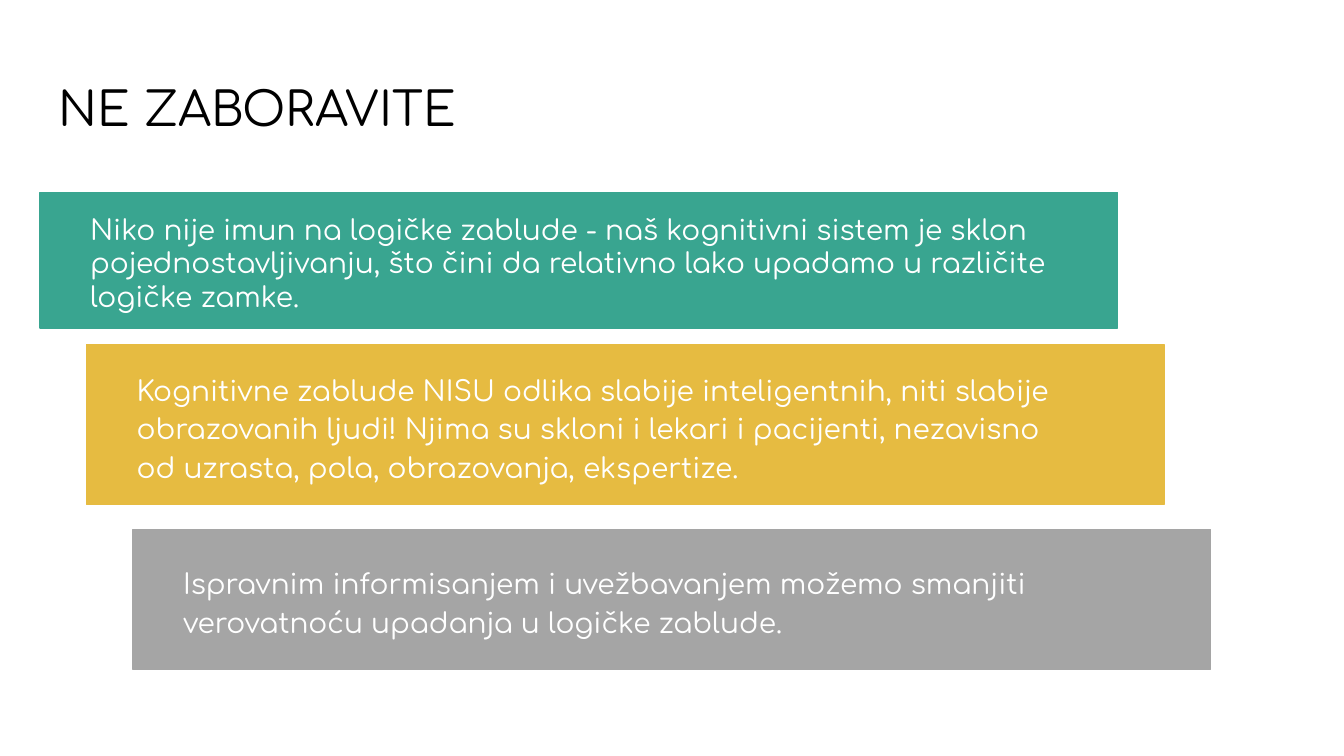
from pptx import Presentation
from pptx.dml.color import RGBColor
from pptx.enum.shapes import MSO_SHAPE
from pptx.enum.text import MSO_ANCHOR, PP_ALIGN
from pptx.util import Pt

BLACK = RGBColor(0x00, 0x00, 0x00)
WHITE = RGBColor(0xFF, 0xFF, 0xFF)
GREEN = RGBColor(0x39, 0xA5, 0x90)
YELLOW = RGBColor(0xE6, 0xBB, 0x41)
GRAY = RGBColor(0xA5, 0xA5, 0xA5)

prs = Presentation()
prs.slide_width, prs.slide_height = Pt(720), Pt(405)
s = prs.slides.add_slide(prs.slide_layouts[6])


def add_text(text, left, top, width, height, size=15, color=WHITE,
             spacing=1.0, after=0):
    tf = s.shapes.add_textbox(Pt(left), Pt(top), Pt(width), Pt(height)).text_frame
    tf.word_wrap = True
    tf.vertical_anchor = MSO_ANCHOR.TOP
    tf.margin_left = tf.margin_right = tf.margin_top = tf.margin_bottom = Pt(7.2)
    p = tf.paragraphs[0]
    p.alignment = PP_ALIGN.LEFT
    p.line_spacing = spacing
    p.space_after = Pt(after)
    r = p.add_run()
    r.text = text
    r.font.name = "Comfortaa"
    r.font.size = Pt(size)
    r.font.color.rgb = color


# Title
add_text("NE ZABORAVITE", 24.5, 35.3, 671, 45.4, size=25.2, color=BLACK)

# Stepped bands: colour, band top and height, text top, width and height, format
bands = [
    (GREEN, 103, 72.7, 106.6, 542, 69.1, {},
     "Niko nije imun na logičke zablude - naš kognitivni sistem je sklon "
     "pojednostavljivanju, što čini da relativno lako upadamo u različite "
     "logičke zamke."),
    (YELLOW, 184.5, 85.7, 190, 512, 74.9, {"spacing": 1.15, "after": 12},
     "Kognitivne zablude NISU odlika slabije inteligentnih, niti slabije "
     "obrazovanih ljudi! Njima su skloni i lekari i pacijenti, nezavisno od "
     "uzrasta, pola, obrazovanja, ekspertize."),
    (GRAY, 283.7, 74.9, 293.8, 512, 53.3, {"spacing": 1.15, "after": 12},
     "Ispravnim informisanjem i uvežbavanjem možemo smanjiti verovatnoću "
     "upadanja u logičke zablude."),
]
for i, (color, top, height, text_top, text_width, text_height, fmt, text) in enumerate(bands):
    left = 21.4 + 24.9 * i
    sp = s.shapes.add_shape(MSO_SHAPE.RECTANGLE, Pt(left), Pt(top), Pt(577.4), Pt(height))
    sp.shadow.inherit = False
    sp.fill.solid()
    sp.fill.fore_color.rgb = color
    sp.line.color.rgb = color
    sp.line.width = Pt(0.75)
    add_text(text, left + 19.8, text_top, text_width, text_height, **fmt)

prs.save("out.pptx")
